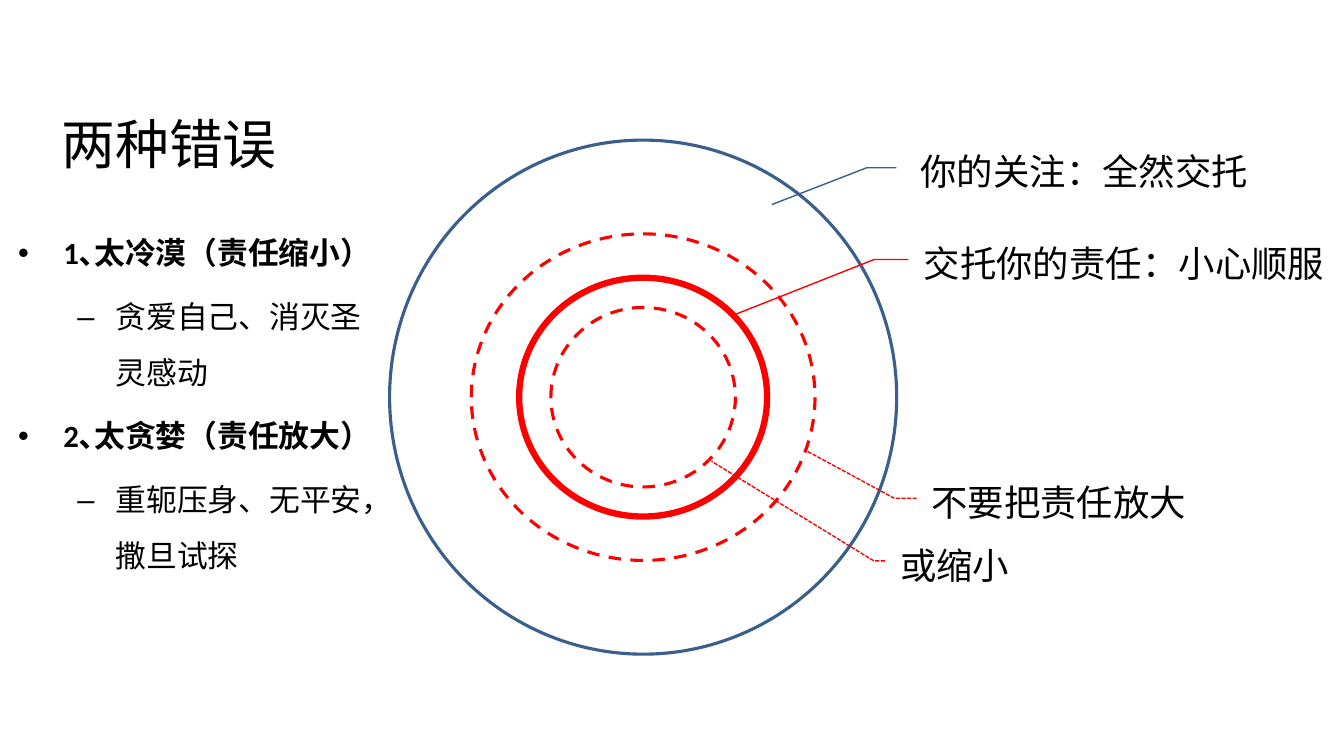
from dataclasses import dataclass

from lxml.etree import SubElement
from pptx import Presentation
from pptx.dml.color import RGBColor
from pptx.enum.dml import MSO_LINE_DASH_STYLE as Dash
from pptx.enum.shapes import MSO_SHAPE as Shape
from pptx.enum.text import MSO_ANCHOR as Anchor, MSO_AUTO_SIZE as AutoSize, PP_ALIGN as Align
from pptx.oxml.ns import qn
from pptx.util import Pt


@dataclass(frozen=True)
class Theme:
    font: str = "Calibri"
    ink: RGBColor = RGBColor(0, 0, 0)
    concern: RGBColor = RGBColor(0x3A, 0x5F, 0x8C)
    duty: RGBColor = RGBColor(0xFF, 0, 0)
    title_size: float = 38.4
    label_size: float = 26
    body_size: float = 22


THEME = Theme()
CENTER = (459.4, 283.7)
LABEL_HEIGHT = 44.6

RINGS = [
    (362.2, 367.2, THEME.concern, 2.25, None),
    (177.1, 170.6, THEME.duty, 4.5, None),
    (245.5, 233.3, THEME.duty, 2.25, Dash.DASH),
    (131.8, 128.2, THEME.duty, 2.25, Dash.DASH),
]

LABELS = [
    ("你的关注：全然交托", 640.8, 100.1, 267.8, (1.032, -0.334), THEME.concern, None),
    ("交托你的责任：小心顺服", 649.4, 165.6, 307.4, (1.334, -0.408), THEME.duty, None),
    ("不要把责任放大", 655.2, 336.2, 202.3, (-0.34, -0.4), THEME.duty, Dash.SQUARE_DOT),
    ("或缩小", 632.2, 380.9, 99.4, (-1.154, -1.248), THEME.duty, Dash.SQUARE_DOT),
]

ERRORS = [
    ("1､太冷漠（责任缩小）", "贪爱自己、消灭圣灵感动"),
    ("2､太贪婪（责任放大）", "重轭压身、无平安，撒旦试探"),
]


def write(paragraph, text, *, size, bold=False, align=Align.LEFT):
    paragraph.alignment = align
    run = paragraph.add_run()
    run.text = text
    run.font.name = THEME.font
    run.font.size = Pt(size)
    run.font.bold = bold
    run.font.color.rgb = THEME.ink


def add_outline(slide, preset, box, color, weight, dash):
    outline = slide.shapes.add_shape(preset, *map(Pt, box))
    outline.shadow.inherit = False
    outline.fill.background()
    outline.line.color.rgb = color
    outline.line.width = Pt(weight)
    if dash is not None:
        outline.line.dash_style = dash
    return outline


def add_ring(slide, width, height, color, weight, dash):
    box = (CENTER[0] - width / 2, CENTER[1] - height / 2, width, height)
    add_outline(slide, Shape.OVAL, box, color, weight, dash)


def add_label(slide, text, left, top, width, target, color, dash):
    box = (left, top, width, LABEL_HEIGHT)
    label = add_outline(slide, Shape.LINE_CALLOUT_2_NO_BORDER, box, color, 1, dash)
    for index, value in enumerate((0.443, -0.002, 0.443, -0.081, *target)):
        label.adjustments[index] = value
    frame = label.text_frame
    frame.word_wrap = True
    frame.vertical_anchor = Anchor.MIDDLE
    write(frame.paragraphs[0], text, size=THEME.label_size, align=Align.CENTER)


def set_title(slide, text):
    title = slide.shapes.title
    title.left, title.top, title.width, title.height = map(Pt, (36.7, 61.9, 185, 79.9))
    frame = title.text_frame
    frame.auto_size = AutoSize.NONE
    frame.vertical_anchor = Anchor.MIDDLE
    write(frame.paragraphs[0], text, size=THEME.title_size)


def set_bullet(paragraph, mark, margin, hanging):
    properties = paragraph._p.get_or_add_pPr()
    properties.set("marL", str(Pt(margin)))
    properties.set("indent", str(-Pt(hanging)))
    SubElement(properties, qn("a:buFont"), typeface="Arial")
    SubElement(properties, qn("a:buChar"), char=mark)


def add_errors(slide, errors):
    frame = slide.shapes.add_textbox(*map(Pt, (5.8, 150.5, 272.9, 338.4))).text_frame
    frame.word_wrap = True
    lines = [(text, level) for pair in errors for level, text in enumerate(pair)]
    for index, (text, level) in enumerate(lines):
        paragraph = frame.add_paragraph() if index else frame.paragraphs[0]
        paragraph.level = level
        set_bullet(paragraph, *(("–", 69.8, 27.4) if level else ("•", 32.4, 32.4)))
        paragraph.line_spacing = 1.5
        if index:
            paragraph.space_before = Pt(6)
        write(paragraph, text, size=THEME.body_size, bold=level == 0)


def main():
    deck = Presentation()
    deck.slide_width, deck.slide_height = Pt(960), Pt(540)
    slide = deck.slides.add_slide(deck.slide_layouts[5])
    set_title(slide, "两种错误")
    for ring in RINGS:
        add_ring(slide, *ring)
    for label in LABELS:
        add_label(slide, *label)
    add_errors(slide, ERRORS)
    deck.save("out.pptx")


if __name__ == "__main__":
    main()
